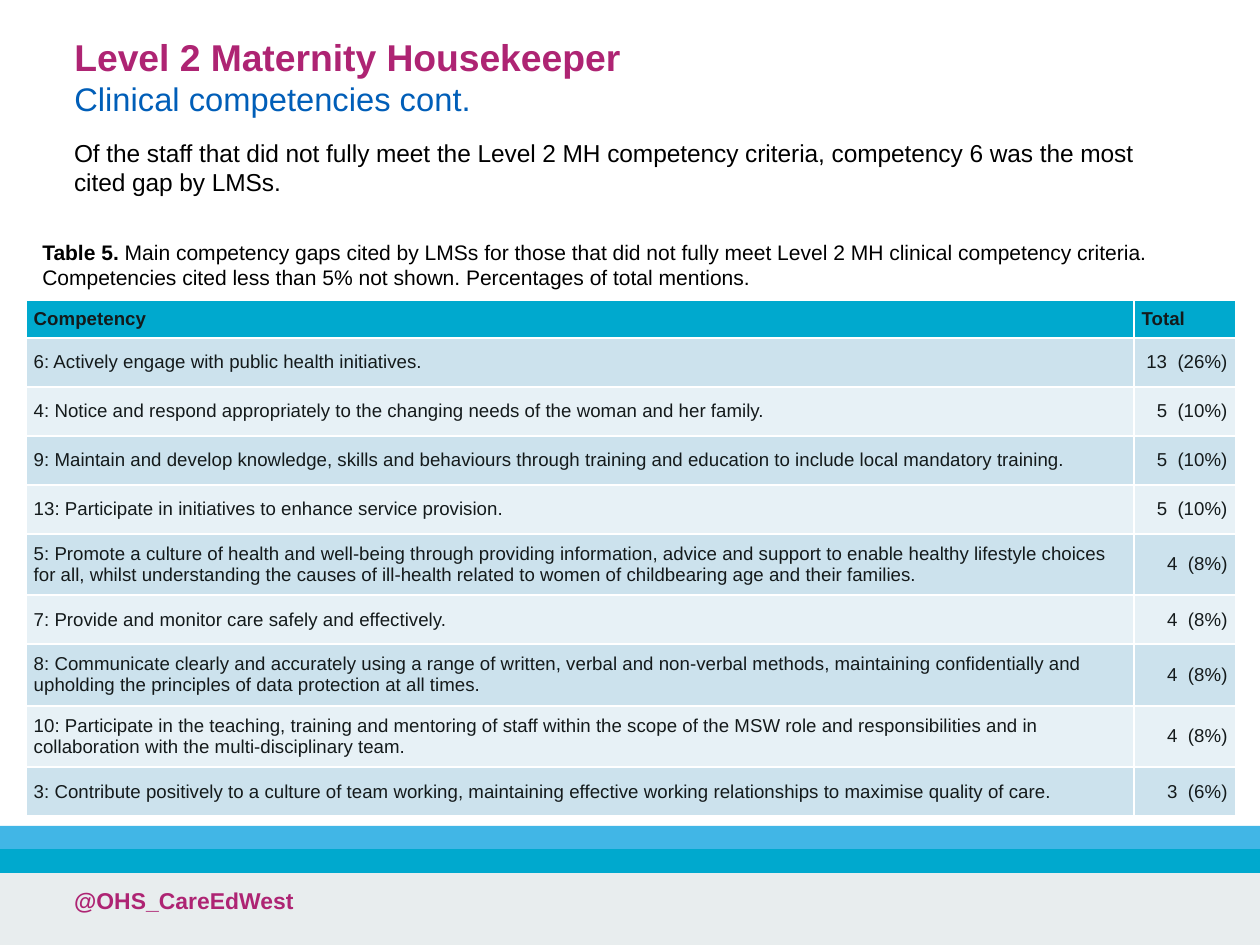
"""Build the Level 2 Maternity Housekeeper clinical competencies slide."""
from pptx import Presentation
from pptx.dml.color import RGBColor
from pptx.enum.shapes import MSO_SHAPE
from pptx.enum.text import MSO_ANCHOR, PP_ALIGN
from pptx.util import Cm, Pt

RECTANGLE = MSO_SHAPE.RECTANGLE
MIDDLE = MSO_ANCHOR.MIDDLE
LEFT, RIGHT = PP_ALIGN.LEFT, PP_ALIGN.RIGHT

MAGENTA = RGBColor(0xAE, 0x24, 0x73)
BLUE = RGBColor(0x00, 0x5E, 0xB8)
SKY = RGBColor(0x41, 0xB6, 0xE6)
AQUA = RGBColor(0x00, 0xA9, 0xCE)
PALE_GREY = RGBColor(0xE8, 0xED, 0xEE)
BAND_DARK = RGBColor(0xCC, 0xE2, 0xED)
BAND_LIGHT = RGBColor(0xE7, 0xF1, 0xF6)
INK = RGBColor(0x14, 0x1A, 0x1B)
BLACK = RGBColor(0x00, 0x00, 0x00)


def add_run(paragraph, text, size, color, bold=False):
    run = paragraph.add_run()
    run.text = text
    run.font.name = "Arial"
    run.font.size = Pt(size)
    run.font.bold = bold
    run.font.color.rgb = color


def add_text_box(left, top, width, height):
    box = slide.shapes.add_textbox(Cm(left), Cm(top), Cm(width), Cm(height))
    box.text_frame.word_wrap = True
    return box.text_frame.paragraphs[0]


presentation = Presentation()
presentation.slide_width = Cm(19.05)
presentation.slide_height = Cm(14.29)
slide = presentation.slides.add_slide(presentation.slide_layouts[5])

footer_bands = [(13.2, 1.09, PALE_GREY), (12.49, 0.36, SKY), (12.84, 0.36, AQUA)]
for top, height, color in footer_bands:
    band = slide.shapes.add_shape(RECTANGLE, 0, Cm(top), presentation.slide_width, Cm(height))
    band.shadow.inherit = False
    band.fill.solid()
    band.fill.fore_color.rgb = color
    band.line.fill.background()

handle = add_text_box(0.87, 13.28, 11.13, 1)
add_run(handle, "@OHS_CareEdWest", 9.8, MAGENTA, True)

title = slide.shapes.title
title.left, title.top, title.width, title.height = Cm(0.87), Cm(0.38), Cm(17.3), Cm(1.55)
title_frame = title.text_frame
title_frame.vertical_anchor = MIDDLE
heading = title_frame.paragraphs[0]
subheading = title_frame.add_paragraph()
add_run(heading, "Level 2 Maternity Housekeeper", 16, MAGENTA, True)
add_run(subheading, "Clinical competencies cont.", 14, BLUE)
for paragraph in title_frame.paragraphs:
    paragraph.alignment = LEFT

summary = add_text_box(0.87, 1.96, 17.3, 1.55)
add_run(summary, "Of the staff that did not fully meet the Level 2 MH competency criteria, "
        "competency 6 was the most cited gap by LMSs.", 10.5, BLACK)

caption = add_text_box(0.39, 3.49, 18.29, 1.02)
add_run(caption, "Table 5. ", 9, BLACK, True)
add_run(caption, "Main competency gaps cited by LMSs for those that did not fully meet "
        "Level 2 MH clinical competency criteria. Competencies cited less than 5% not shown. "
        "Percentages of total mentions.", 9, BLACK)

HEADER_ROW, SINGLE_ROW, DOUBLE_ROW = 0.57, 0.74, 0.93
competency_rows = [
    ("Competency", "Total", HEADER_ROW),
    ("6: Actively engage with public health initiatives.", "13  (26%)", SINGLE_ROW),
    ("4: Notice and respond appropriately to the changing needs of the woman "
     "and her family.", "5  (10%)", SINGLE_ROW),
    ("9: Maintain and develop knowledge, skills and behaviours through training "
     "and education to include local mandatory training.", "5  (10%)", SINGLE_ROW),
    ("13: Participate in initiatives to enhance service provision.", "5  (10%)", SINGLE_ROW),
    ("5: Promote a culture of health and well-being through providing information, "
     "advice and support to enable healthy lifestyle choices for all, whilst understanding "
     "the causes of ill-health related to women of childbearing age and their families.",
     "4  (8%)", DOUBLE_ROW),
    ("7: Provide and monitor care safely and effectively.", "4  (8%)", SINGLE_ROW),
    ("8: Communicate clearly and accurately using a range of written, verbal and non-verbal "
     "methods, maintaining confidentially and upholding the principles of data protection "
     "at all times.", "4  (8%)", DOUBLE_ROW),
    ("10: Participate in the teaching, training and mentoring of staff within the scope "
     "of the MSW role and responsibilities and in collaboration with the "
     "multi-disciplinary team.", "4  (8%)", DOUBLE_ROW),
    ("3: Contribute positively to a culture of team working, maintaining effective working "
     "relationships to maximise quality of care.", "3  (6%)", SINGLE_ROW),
]
table_height = sum(height for _, _, height in competency_rows)
table = slide.shapes.add_table(len(competency_rows), 2, Cm(0.39), Cm(4.53),
                               Cm(18.29), Cm(table_height)).table
table.columns[0].width = Cm(16.75)
table.columns[1].width = Cm(1.54)

for row_index, (competency, total, height) in enumerate(competency_rows):
    is_header = row_index == 0
    table.rows[row_index].height = Cm(height)
    for column_index, text in enumerate((competency, total)):
        cell = table.cell(row_index, column_index)
        cell.vertical_anchor = MIDDLE
        cell.margin_left = cell.margin_right = Cm(0.12)
        cell.margin_top = cell.margin_bottom = Cm(0.12)
        cell.fill.solid()
        band_color = BAND_DARK if row_index % 2 else BAND_LIGHT
        cell.fill.fore_color.rgb = AQUA if is_header else band_color
        paragraph = cell.text_frame.paragraphs[0]
        paragraph.alignment = RIGHT if column_index and not is_header else LEFT
        add_run(paragraph, text, 8, INK, is_header)

presentation.save("out.pptx")
